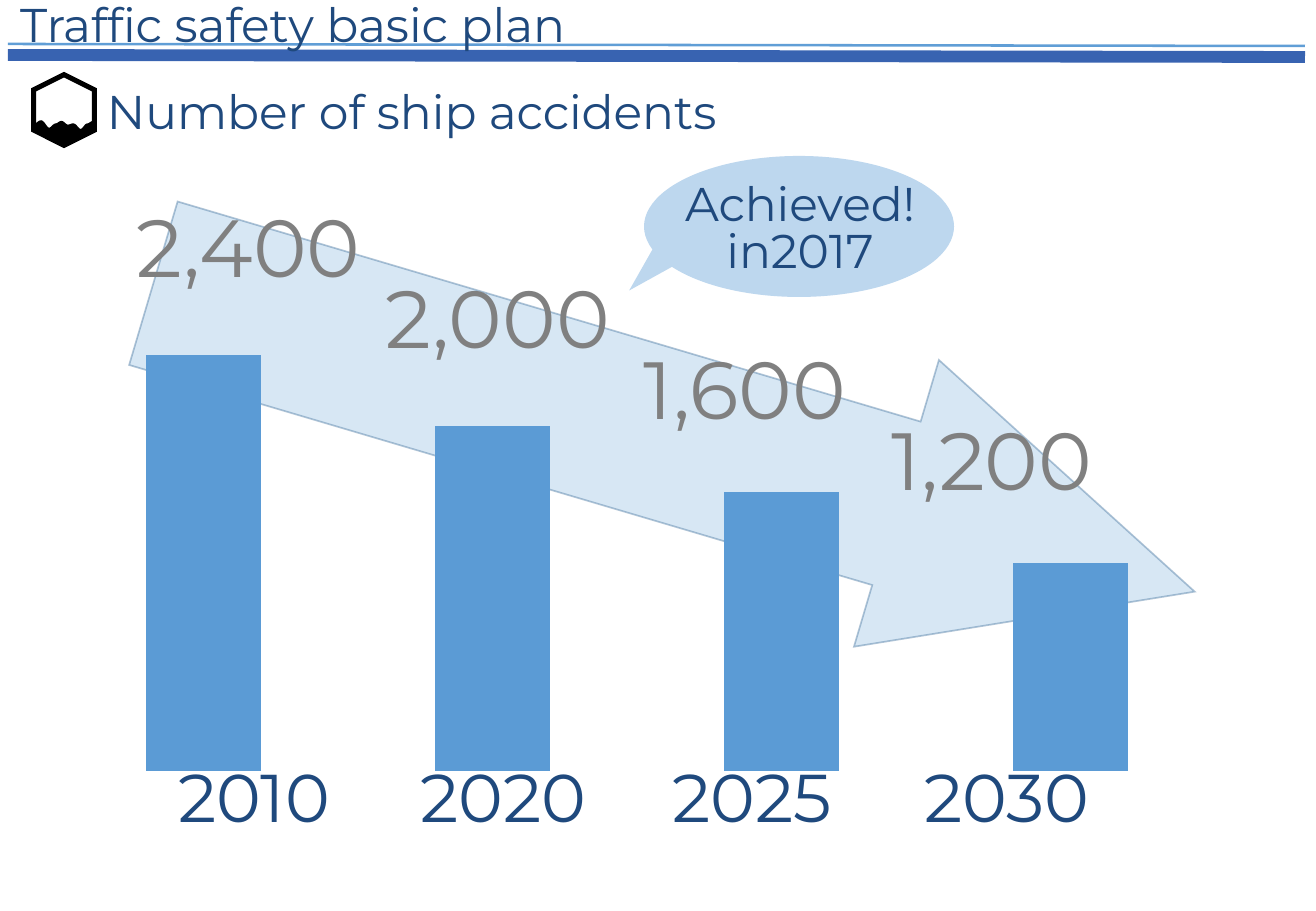
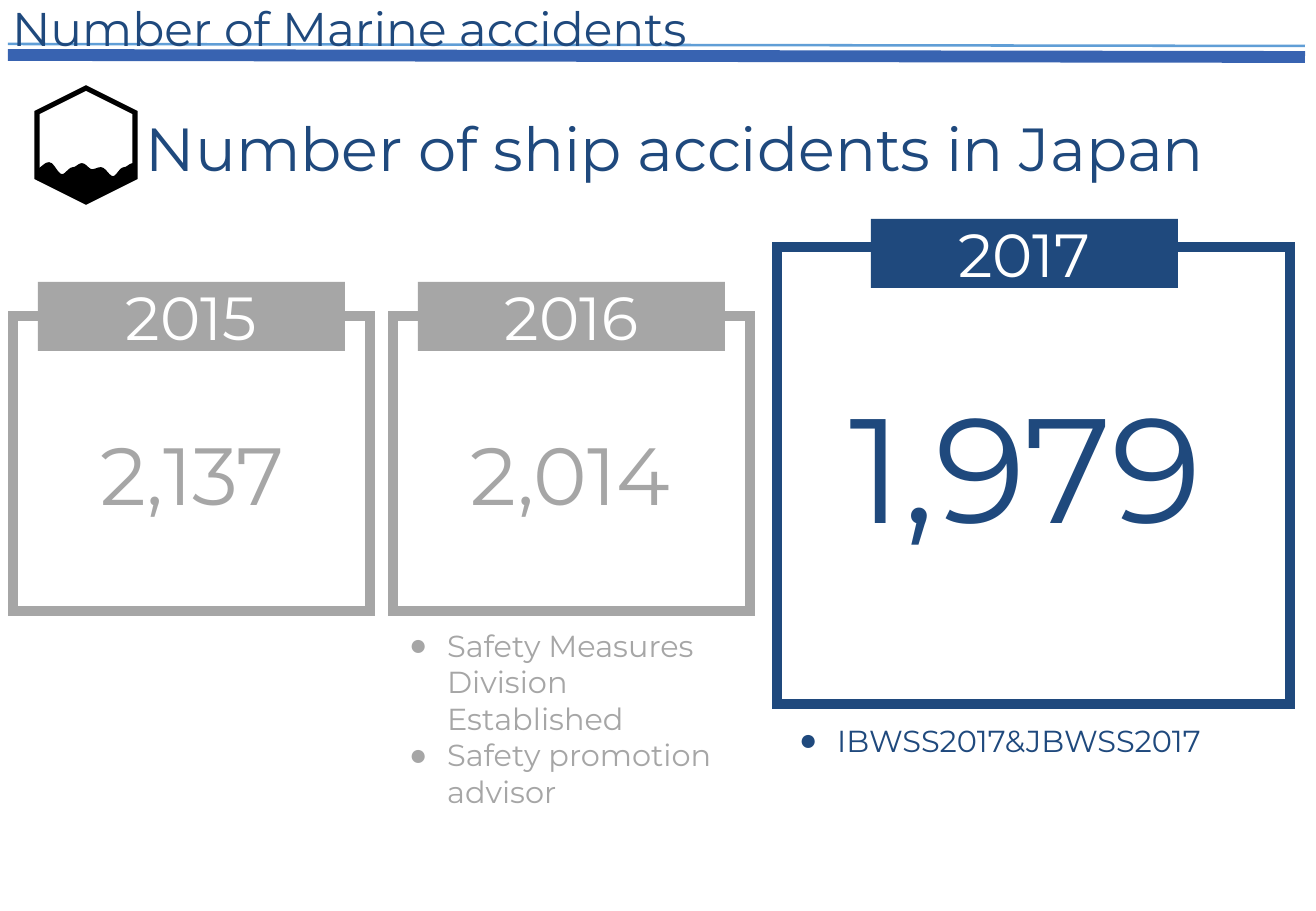
import math

from lxml import etree
from pptx import Presentation
from pptx.chart.data import CategoryChartData
from pptx.dml.color import RGBColor
from pptx.enum.chart import XL_CHART_TYPE
from pptx.enum.shapes import MSO_CONNECTOR, MSO_SHAPE
from pptx.enum.text import MSO_ANCHOR, MSO_AUTO_SIZE, PP_ALIGN
from pptx.oxml.ns import qn
from pptx.util import Emu, Pt

LEFT, CENTER = PP_ALIGN.LEFT, PP_ALIGN.CENTER
COLUMN = XL_CHART_TYPE.COLUMN_CLUSTERED
STRAIGHT = MSO_CONNECTOR.STRAIGHT
RECT, HEXAGON = MSO_SHAPE.RECTANGLE, MSO_SHAPE.HEXAGON
ARROW, OVAL = MSO_SHAPE.RIGHT_ARROW, MSO_SHAPE.OVAL
TRIANGLE = MSO_SHAPE.ISOSCELES_TRIANGLE

# Shared style; lengths are px, 121.5 to the inch
SCALE = 914400 / 121.5
SLIDE_W, SLIDE_H = 1316, 911
FONT = "Montserrat"
NAVY, BLUE, PALE = "1F497D", "5B9BD5", "BDD7EE"
GRAY, SILVER, WHITE, BLACK = "808080", "A6A6A6", "FFFFFF", "000000"
BANDS = [(55, "3863B1", 7), (44, "609ED6", 1.5)]  # y, colour, width

# Sea emblem, px from its centre
EMBLEM_W, EMBLEM_H = 98, 114
WAVE = [(-50, 25), (-37, 18), (-24, 30), (-13, 23), (-4, 19), (6, 25),
        (15, 23), (27, 32), (38, 23), (47, 19)]
SEABED = [(47, 32), (0, 55), (-49, 34)]

# Slide 1 content
PLAN = {
    "title": "Traffic safety basic plan",
    "title_box": (8, -4, 672, 63),
    "heading": "Number of ship accidents",
    "goals": [  # year, its centre, target, its left, bar height
        ("2010", 254, "2,400", 125, 100),
        ("2020", 503, "2,000", 374, 83),
        ("2025", 752, "1,600", 632, 67),
        ("2030", 1007, "1,200", 880, 50),
    ],
    "bubble": ["Achieved!", "in2017"],
}
CHART = (35, 241, 1205, 542)
PLOT = (59, 272, 1156, 499)

# Slide 2 content
MARINE = {
    "title": "Number of Marine accidents",
    "title_box": (0, 0, 786, 62),
    "heading": "Number of ship accidents in Japan",
    "cards": [
        {"year": "2015", "count": "2,137", "size": 48, "color": SILVER,
         "box": (13, 316, 357, 295), "tag": (38, 282), "value": (39, 430, 307, 92)},
        {"year": "2016", "count": "2,014", "size": 48, "color": SILVER,
         "box": (393, 316, 357, 295), "tag": (418, 282), "value": (417, 430, 307, 92)},
        {"year": "2017", "count": "1,979", "size": 88, "color": NAVY,
         "box": (777, 247, 513, 457), "tag": (871, 219), "value": (761, 389, 530, 175)},
    ],
    "notes": [
        (["Safety Measures Division Established", "Safety promotion advisor"],
         SILVER, (397, 621, 362, 197)),
        (["IBWSS2017&JBWSS2017"], NAVY, (787, 716, 502, 49)),
    ],
}
TAG_W, TAG_H = 307, 69


def px(n):
    return Emu(round(n * SCALE))


def rgb(color):
    return RGBColor.from_string(color)


def place(shape, box):
    shape.left, shape.top, shape.width, shape.height = map(px, box)


def write(shape, lines, size, color=NAVY, align=LEFT, spacing=0.9, before=8.1,
          bullet=None):
    """Fill a shape with paragraphs in one format."""
    tf = shape.text_frame
    tf.word_wrap = True
    tf.auto_size = MSO_AUTO_SIZE.NONE
    tf.vertical_anchor = MSO_ANCHOR.TOP
    for i, line in enumerate(lines):
        p = tf.add_paragraph() if i else tf.paragraphs[0]
        if bullet:
            pPr = p._p.get_or_add_pPr()
            pPr.set("marL", str(px(38)))
            pPr.set("indent", str(px(-38)))
            etree.SubElement(pPr, qn("a:buChar"), char=bullet)
        p.alignment = align
        p.line_spacing = spacing
        p.space_before = Pt(before if i else 0)
        r = p.add_run()
        r.text = line
        r.font.name, r.font.size = FONT, Pt(size)
        r.font.color.rgb = rgb(color)


def add_text(s, text, box, size, **style):
    lines = [text] if isinstance(text, str) else text
    tb = s.shapes.add_textbox(*map(px, box))
    write(tb, lines, size, **style)


def paint(shape, fill=None, line=None, width=1):
    shape.shadow.inherit = False
    if fill:
        shape.fill.solid()
        shape.fill.fore_color.rgb = rgb(fill)
    else:
        shape.fill.background()
    if line:
        shape.line.color.rgb = rgb(line)
        shape.line.width = Pt(width)
        ln = shape.element.spPr.find(qn("a:ln"))
        etree.SubElement(ln, qn("a:miter"), lim="800000")
    else:
        shape.line.fill.background()


def add_shape(s, kind, box, rotation=0, **style):
    sp = s.shapes.add_shape(kind, *map(px, box))
    sp.rotation = rotation
    paint(sp, **style)
    return sp


def set_alpha(fill, percent):
    color = fill.find(f".//{qn('a:srgbClr')}")
    etree.SubElement(color, qn("a:alpha"), val=str(percent * 1000))


def add_bands(prs, s):
    """Draw the title bands and hand them to the slide master."""
    for i, (y, color, width) in enumerate(BANDS):
        band = s.shapes.add_connector(STRAIGHT, px(8), px(y), px(1305), px(y + 2))
        band.line.color.rgb = rgb(color)
        band.line.width = Pt(width)
        etree.SubElement(band.element.spPr, qn("a:effectLst"))
        band.element.nvCxnSpPr.cNvPr.set("id", str(100 + i))
        prs.slide_master.shapes.element.append(band.element)


def add_emblem(s, cx, cy, zoom):
    w, h = EMBLEM_H * zoom, EMBLEM_W * zoom  # swapped, as it is turned by 90
    add_shape(s, HEXAGON, (cx - w / 2, cy - h / 2, w, h), 90,
              fill=WHITE, line=BLACK, width=3)
    steps = 6
    outline = [WAVE[0]]
    for (x0, y0), (x1, y1) in zip(WAVE, WAVE[1:]):
        for k in range(1, steps + 1):
            t = k / steps
            rise = (1 - math.cos(math.pi * t)) / 2
            outline.append((x0 + (x1 - x0) * t, y0 + (y1 - y0) * rise))
    points = [(px(cx + x * zoom), px(cy + y * zoom)) for x, y in outline + SEABED]
    builder = s.shapes.build_freeform(*points[0])
    builder.add_line_segments(points[1:], close=True)
    paint(builder.convert_to_shape(), fill=BLACK, line=BLACK)


def add_slide(prs, layout, content):
    s = prs.slides.add_slide(prs.slide_layouts[layout])
    place(s.shapes.title, content["title_box"])
    write(s.shapes.title, [content["title"]], 28)
    return s


def add_goal_chart(s, values):
    data = CategoryChartData()
    data.categories = [str(i + 1) for i in range(len(values))]
    data.add_series("Series 1", values)
    chart = s.shapes.add_chart(COLUMN, *map(px, CHART), data).chart
    chart.has_legend = chart.has_title = False
    chart.font.name, chart.font.size = "Calibri", Pt(10)
    chart.font.color.rgb = rgb(BLACK)
    axis = chart.value_axis
    axis.minimum_scale, axis.maximum_scale = 0, 120
    axis.has_major_gridlines = False
    axis.visible = chart.category_axis.visible = False
    plot = chart.plots[0]
    plot.gap_width, plot.vary_by_categories = 150, False
    fill = plot.series[0].format.fill
    fill.solid()
    fill.fore_color.rgb = rgb(BLUE)

    # Clear background and fixed plot area
    body = chart.element.find(qn("c:chart"))
    spPr = etree.Element(qn("c:spPr"))
    etree.SubElement(spPr, qn("a:noFill"))
    etree.SubElement(etree.SubElement(spPr, qn("a:ln")), qn("a:noFill"))
    body.addnext(spPr)
    area = body.find(qn("c:plotArea"))
    for old in area.findall(qn("c:layout")):
        area.remove(old)
    layout = etree.Element(qn("c:layout"))
    area.insert(0, layout)
    manual = etree.SubElement(layout, qn("c:manualLayout"))
    left, top, w, h = CHART
    parts = [("layoutTarget", "inner"), ("xMode", "edge"), ("yMode", "edge"),
             ("x", (PLOT[0] - left) / w), ("y", (PLOT[1] - top) / h),
             ("w", PLOT[2] / w), ("h", PLOT[3] / h)]
    for tag, val in parts:
        etree.SubElement(manual, qn(f"c:{tag}"), val=str(val))


def build_plan(prs):
    s = add_slide(prs, 5, PLAN)
    add_bands(prs, s)

    # Falling arrow behind the bars
    arrow = add_shape(s, ARROW, (131, 288, 1086, 299), 16.5, fill=BLUE, line="43739E")
    arrow.adjustments[0], arrow.adjustments[1] = 0.57, 1.04
    spPr = arrow.element.spPr
    set_alpha(spPr.find(qn("a:solidFill")), 24)
    set_alpha(spPr.find(qn("a:ln")), 42)
    add_goal_chart(s, [goal[-1] for goal in PLAN["goals"]])

    add_emblem(s, 64, 110, 0.62)
    add_text(s, PLAN["heading"], (95, 83, 712, 63), 28)

    # Speech bubble
    add_shape(s, OVAL, (644, 156, 310, 141), fill=PALE)
    add_shape(s, TRIANGLE, (634, 236, 36, 64), 225.3, fill=PALE)
    add_text(s, PLAN["bubble"], (648, 191, 304, 86), 28, align=CENTER, spacing=Pt(20))

    # Years and targets
    for i, (year, center, target, left, _) in enumerate(PLAN["goals"]):
        add_text(s, year, (center - 129, 758, 258, 68), 40, align=CENTER)
        add_text(s, target, (left, 202 + 71 * i, 328, 96), 48, color=GRAY)


def build_marine(prs):
    s = add_slide(prs, 3, MARINE)
    add_emblem(s, 86, 145, 1)
    add_text(s, MARINE["heading"], (134, 113, 1182, 72), 36)

    # Year cards
    for card in MARINE["cards"]:
        color = card["color"]
        add_shape(s, RECT, card["box"], line=color, width=6)
        tag = add_shape(s, RECT, (*card["tag"], TAG_W, TAG_H), fill=color)
        write(tag, [card["year"]], 36, color=WHITE, align=CENTER)
        add_text(s, card["count"], card["value"], card["size"], color=color,
                 align=CENTER)

    # Notes under the cards
    for idx, (lines, color, box) in enumerate(MARINE["notes"], 1):
        body = s.placeholders[idx]
        place(body, box)
        write(body, lines, 18, color=color, spacing=1.0, before=0, bullet="●")


def main():
    prs = Presentation()
    prs.slide_width, prs.slide_height = px(SLIDE_W), px(SLIDE_H)
    build_plan(prs)
    build_marine(prs)
    prs.save("out.pptx")


if __name__ == "__main__":
    main()
